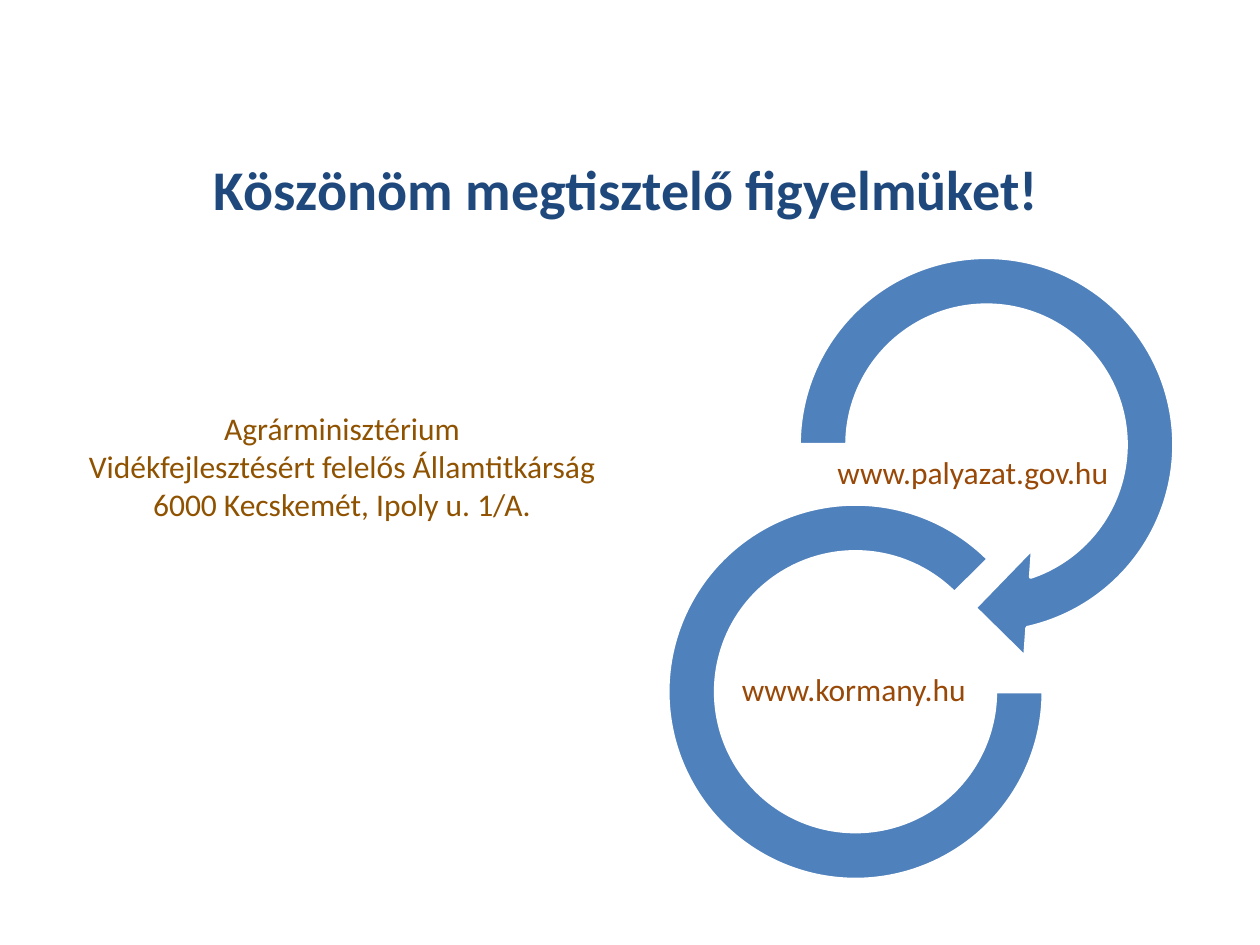
import pptx
import pptx.util
import pptx.dml.color
import pptx.enum.shapes
import pptx.enum.text

Pt = pptx.util.Pt
RGB = pptx.dml.color.RGBColor
KIND = pptx.enum.shapes.MSO_SHAPE
ANCHOR = pptx.enum.text.MSO_ANCHOR
ALIGN = pptx.enum.text.PP_ALIGN

NAVY = RGB(0x1F, 0x49, 0x7D)
BLUE = RGB(0x4F, 0x81, 0xBD)
RUST = RGB(0x98, 0x48, 0x07)
BROWN = RGB(0x8F, 0x52, 0x01)
WHITE = RGB(0xFF, 0xFF, 0xFF)

TITLE = "Köszönöm megtisztelő figyelmüket!"
OFFICE = [
    "Agrárminisztérium",
    "Vidékfejlesztésért felelős Államtitkárság",
    "6000 Kecskemét, Ipoly u. 1/A.",
]
RINGS = [
    {"kind": KIND.CIRCULAR_ARROW, "place": (439.2, 129.6, 249.12),
     "adjust": (0.1098, 11.42322, 45, 108, 0.125),
     "site": "www.palyazat.gov.hu", "box": (468, 236.16, 182.88, 69.84)},
    {"kind": KIND.BLOCK_ARC, "place": (381.6, 288, 214.56),
     "adjust": (0, 189, 0.1274),
     "site": "www.kormany.hu", "box": (421.92, 360, 138.96, 69.84)},
]


def add_text(shapes, lines, box, size=18, color=RUST, bold=False,
             anchor=ANCHOR.MIDDLE, insets=(7.2, 3.6, 7.2, 3.6), spacing=1.0):
    frame = shapes.add_textbox(*map(Pt, box)).text_frame
    frame.word_wrap = True
    frame.vertical_anchor = anchor
    (frame.margin_left, frame.margin_top,
     frame.margin_right, frame.margin_bottom) = map(Pt, insets)
    frame.text = "\n".join(lines)
    for para in frame.paragraphs:
        para.alignment = ALIGN.CENTER
        para.line_spacing = spacing
        for run in para.runs:
            font = run.font
            font.name = "Calibri"
            font.size = Pt(size)
            font.bold = bold
            font.color.rgb = color


def add_ring(shapes, ring):
    left, top, side = map(Pt, ring["place"])
    shape = shapes.add_shape(ring["kind"], left, top, side, side)
    for i, value in enumerate(ring["adjust"]):
        shape.adjustments[i] = value
    shape.shadow.inherit = False
    shape.fill.solid()
    shape.fill.fore_color.rgb = BLUE
    shape.line.color.rgb = WHITE
    shape.line.width = Pt(2)
    add_text(shapes, [ring["site"]], ring["box"],
             insets=(1, 1, 8, 1), spacing=0.9)


def main():
    deck = pptx.Presentation()
    deck.slide_width, deck.slide_height = Pt(720), Pt(540)
    slide = deck.slides.add_slide(deck.slide_layouts[6])
    add_text(slide.shapes, [TITLE], (85.68, 73.44, 544.32, 67.68),
             size=32, color=NAVY, bold=True)
    group = slide.shapes.add_group_shape()
    for ring in RINGS:
        add_ring(group.shapes, ring)
    add_text(slide.shapes, OFFICE, (-5.76, 230.4, 402.48, 72.72),
             color=BROWN, anchor=ANCHOR.TOP)
    deck.save("out.pptx")


if __name__ == "__main__":
    main()
